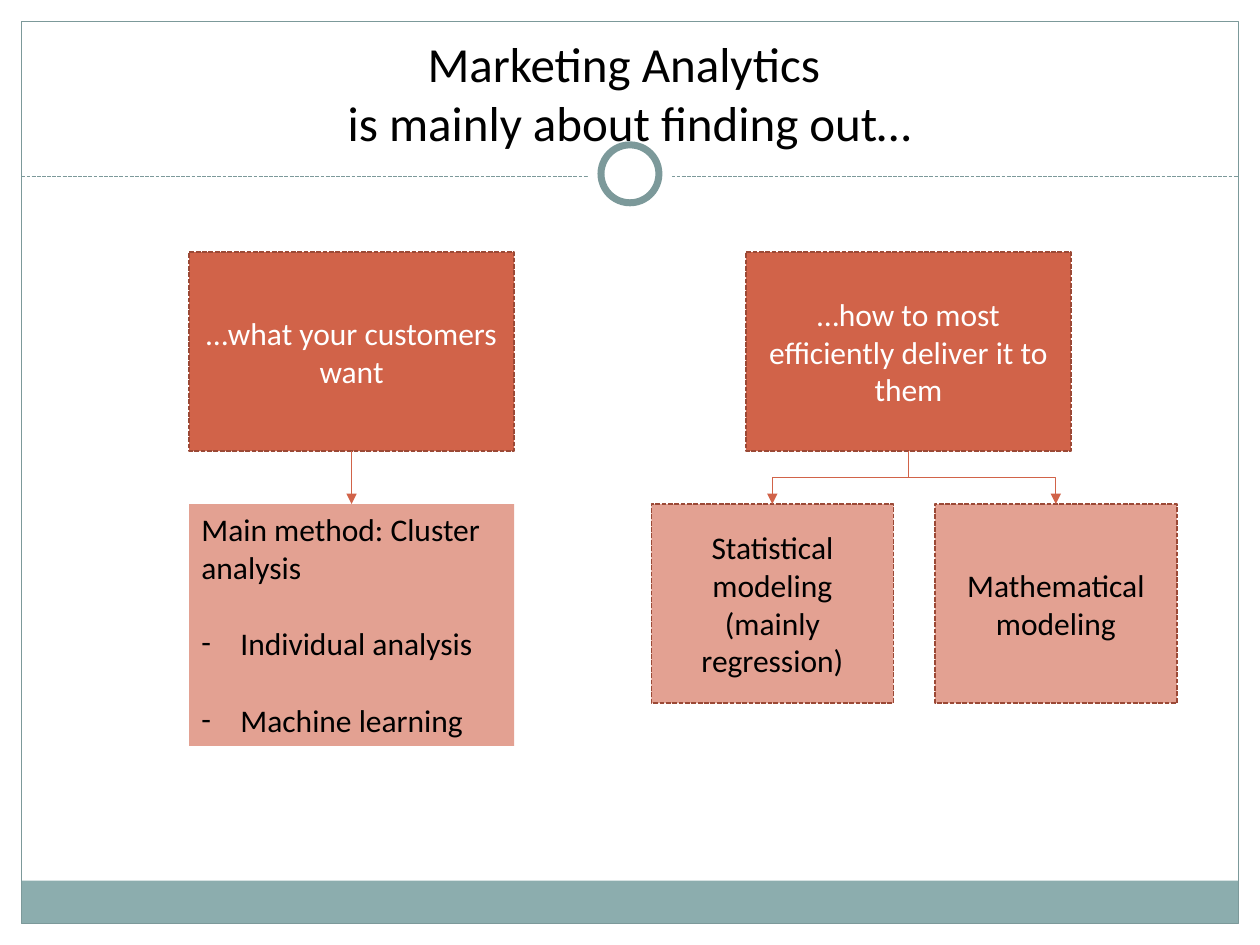
"""Build the Marketing Analytics slide: two goals and the methods behind each."""
from pptx import Presentation
from pptx.dml.color import RGBColor
from pptx.enum.dml import MSO_LINE
from pptx.enum.shapes import MSO_CONNECTOR, MSO_SHAPE
from pptx.enum.text import MSO_ANCHOR, MSO_AUTO_SIZE, PP_ALIGN
from pptx.oxml.ns import qn
from pptx.util import Inches, Pt
from lxml import etree

RECT, OVAL = MSO_SHAPE.RECTANGLE, MSO_SHAPE.OVAL
STRAIGHT, ELBOW = MSO_CONNECTOR.STRAIGHT, MSO_CONNECTOR.ELBOW
DASH = MSO_LINE.SQUARE_DOT
LEFT, CENTER = PP_ALIGN.LEFT, PP_ALIGN.CENTER
TOP, MIDDLE, BOTTOM = MSO_ANCHOR.TOP, MSO_ANCHOR.MIDDLE, MSO_ANCHOR.BOTTOM

FONT = "Calibri"
BLACK = RGBColor(0x00, 0x00, 0x00)
WHITE = RGBColor(0xFF, 0xFF, 0xFF)
TEAL = RGBColor(0x7C, 0x99, 0x9A)
BAND = RGBColor(0x8C, 0xAD, 0xAE)
RUST = RGBColor(0xD1, 0x63, 0x49)
RUST_DARK = RGBColor(0x9B, 0x49, 0x36)
RUST_LIGHT = RGBColor(0xE3, 0xA1, 0x92)

TITLE = "Marketing Analytics \vis mainly about finding out…"
GOALS = [
    ("wants", 1.5, ["…what your customers want"]),
    ("delivery", 5.92, ["…how to most efficiently deliver it to them"]),
]
METHODS = [
    ("statistical", 5.17, ["Statistical modeling", "(mainly regression)"]),
    ("mathematical", 7.42, ["Mathematical modeling"]),
]
CLUSTER = "Main method: Cluster analysis"
CLUSTER_ITEMS = ["Individual analysis", "Machine learning"]
LINKS = [("delivery", "mathematical"), ("delivery", "statistical"), ("wants", "cluster")]

GOAL_TOP, METHOD_TOP, BOX_H = 2, 4, 1.58
GOAL_W, METHOD_W, CLUSTER_H = 2.58, 1.92, 1.92
MARGIN, RULE_Y, RING_Y = 0.17, 1.4, 1.38


def add_box(s, kind, box, fill=None, line=None, width=0.75, dash=None):
    sp = s.shapes.add_shape(kind, *map(Inches, box))
    sp.shadow.inherit = False
    if fill is None:
        sp.fill.background()
    else:
        sp.fill.solid()
        sp.fill.fore_color.rgb = fill
    if line is None:
        sp.line.fill.background()
    else:
        sp.line.color.rgb = line
        sp.line.width = Pt(width)
        sp.line.dash_style = dash
    return sp


def write(sp, lines, size, color, align=CENTER, anchor=MIDDLE):
    tf = sp.text_frame
    tf.word_wrap = True
    tf.auto_size = MSO_AUTO_SIZE.NONE
    tf.vertical_anchor = anchor
    tf.text = "\n".join(lines)
    for p in tf.paragraphs:
        p.alignment = align
        for r in p.runs:
            r.font.name, r.font.size, r.font.color.rgb = FONT, Pt(size), color
    return tf


def add_line(s, kind, color, begin=(0, 0), end=(0, 0)):
    c = s.shapes.add_connector(kind, *map(Inches, begin + end))
    c.line.color.rgb = color
    c.line.width = Pt(0.75)
    return c


def finish_line(c, arrow=False):
    if arrow:
        etree.SubElement(c.line._get_or_add_ln(), qn("a:tailEnd"), type="triangle")
    etree.SubElement(c.element.spPr, qn("a:effectLst"))


def link(s, source, target):
    x1, x2 = (sp.left + sp.width // 2 for sp in (source, target))
    y1, y2 = source.top + source.height, target.top
    c = add_line(s, STRAIGHT if x1 == x2 else ELBOW, RUST)
    c.begin_connect(source, 2)
    c.end_connect(target, 0)
    if x1 != x2:
        c.width, c.height = y2 - y1, abs(x2 - x1)
        c.left = (x1 + x2 - c.width) // 2
        c.top = (y1 + y2 - c.height) // 2
        xfrm = c.element.spPr.find(qn("a:xfrm"))
        xfrm.set("rot", "16200000" if x2 > x1 else "5400000")
        xfrm.set("flipH", "1" if x2 > x1 else "0")
    finish_line(c, arrow=True)


def add_frame(s):
    inner = 10 - 2 * MARGIN
    add_box(s, RECT, (MARGIN, 6.99, inner, 0.34), BAND)
    add_box(s, RECT, (MARGIN, MARGIN, inner, 7.16), line=TEAL)
    rule = add_line(s, STRAIGHT, TEAL, (MARGIN, RULE_Y), (10 - MARGIN, RULE_Y))
    rule.line.dash_style = DASH
    finish_line(rule)
    for d, line in ((0.67, None), (0.46, TEAL)):
        add_box(s, OVAL, (5 - d / 2, RING_Y - d / 2, d, d), WHITE, line, 4)


def add_cluster(s):
    sp = add_box(s, RECT, (GOALS[0][1], METHOD_TOP, GOAL_W, CLUSTER_H), RUST_LIGHT)
    tf = write(sp, [CLUSTER] + CLUSTER_ITEMS, 18, BLACK, LEFT, TOP)
    tf.auto_size = MSO_AUTO_SIZE.SHAPE_TO_FIT_TEXT
    for p in tf.paragraphs[1:]:
        p.space_before = Pt(22)
        pPr = p._p.get_or_add_pPr()
        pPr.set("marL", str(Inches(0.31)))
        pPr.set("indent", str(-Inches(0.31)))
        etree.SubElement(pPr, qn("a:buFont"), typeface=FONT)
        etree.SubElement(pPr, qn("a:buChar"), char="-")
    return sp


def main():
    prs = Presentation()
    prs.slide_width, prs.slide_height = Inches(10), Inches(7.5)
    s = prs.slides.add_slide(prs.slide_layouts[5])
    add_frame(s)

    title = s.shapes.title
    title.left, title.top, title.width, title.height = map(Inches, (0.33, 0.42, 9.33, 0.83))
    write(title, [TITLE], 28, BLACK, anchor=BOTTOM)
    s.shapes.element.append(title.element)

    boxes = {}
    rows = (
        (GOALS, GOAL_TOP, GOAL_W, RUST, WHITE),
        (METHODS, METHOD_TOP, METHOD_W, RUST_LIGHT, BLACK),
    )
    for items, top, width, fill, color in rows:
        for name, left, lines in items:
            box = (left, top, width, BOX_H)
            boxes[name] = add_box(s, RECT, box, fill, RUST_DARK, 0.9, DASH)
            write(boxes[name], lines, 18, color)
    boxes["cluster"] = add_cluster(s)

    for source, target in LINKS:
        link(s, boxes[source], boxes[target])
    prs.save("out.pptx")


if __name__ == "__main__":
    main()
